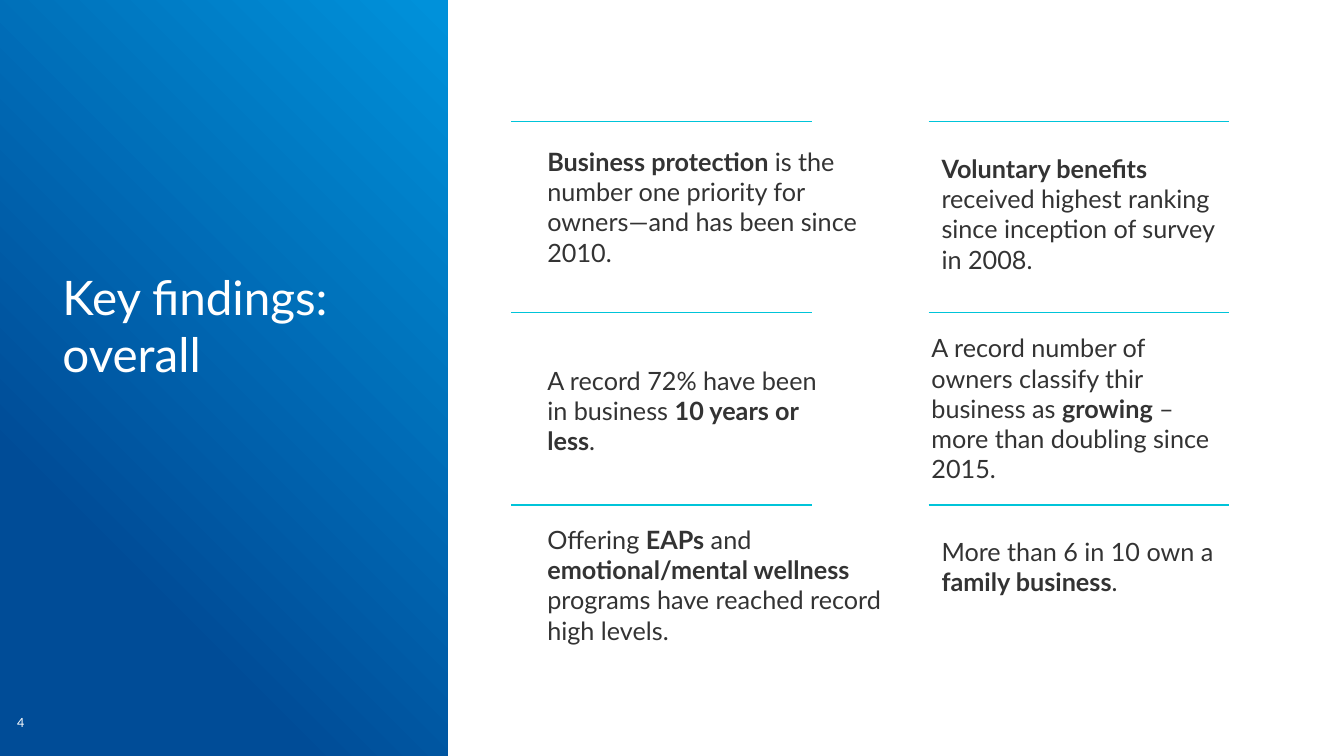
from pptx import Presentation
from pptx.dml.color import RGBColor
from pptx.enum.shapes import MSO_CONNECTOR, MSO_SHAPE
from pptx.enum.text import MSO_ANCHOR
from pptx.oxml.ns import qn
from pptx.util import Pt
from lxml import etree

EMU_PER_PX = 9144  # 100 px to the inch
RECTANGLE = MSO_SHAPE.RECTANGLE
STRAIGHT = MSO_CONNECTOR.STRAIGHT
TOP, BOTTOM = MSO_ANCHOR.TOP, MSO_ANCHOR.BOTTOM

FONT = "Lato"
WHITE, DARK_GREY, TEAL = "FFFFFF", "333333", "00C4D9"
NAVY, SKY = "004C97", "0091DA"

RULE_COLUMNS = (507, 921)
RULE_ROWS = (121, 310, 501)
RULE_WIDTH = 298

# Left, top, width, height and wording; ** switches bold on and off
FINDINGS = [
    (533, 140, 336, 131, "**Business protection **is the number one priority "
                         "for owners—and has been since 2010."),
    (533, 357, 301, 101, "A record 72% have been in business "
                         "**10 years or less**."),
    (533, 515, 352, 131, "Offering **EAPs** and **emotional/mental wellness **"
                         "programs have reached record high levels."),
    (924, 147, 310, 131, "**Voluntary benefits **received highest ranking "
                         "since inception of survey in 2008."),
    (914, 325, 310, 162, "A record number of owners classify thir business as "
                         "**growing **– more than doubling since 2015."),
    (924, 527, 310, 71, "More than 6 in 10 own a **family business**."),
]


def px(*lengths):
    return [length * EMU_PER_PX for length in lengths]


def rgb(hex_code):
    return RGBColor.from_string(hex_code)


def add_text(slide, box, text, size=18, color=DARK_GREY, anchor=TOP,
             inset=(10, 5)):
    frame = slide.shapes.add_textbox(*px(*box)).text_frame
    frame.word_wrap = True
    frame.vertical_anchor = anchor
    side, end = px(*inset)
    frame.margin_left = frame.margin_right = side
    frame.margin_top = frame.margin_bottom = end
    for index, part in enumerate(text.split("**")):
        if part:
            run = frame.paragraphs[0].add_run()
            run.text = part
            run.font.name = FONT
            run.font.size = Pt(size)
            run.font.bold = index % 2 == 1
            run.font.color.rgb = rgb(color)


def add_panel(slide, box, stops, angle):
    panel = slide.shapes.add_shape(RECTANGLE, *px(*box))
    panel.shadow.inherit = False
    panel.line.fill.background()
    panel.fill.gradient()
    panel.fill.gradient_angle = angle
    for stop, (position, color) in zip(panel.fill.gradient_stops, stops):
        stop.position = position
        stop.color.rgb = rgb(color)


def add_rule(slide, left, top, width):
    rule = slide.shapes.add_connector(
        STRAIGHT, *px(left, top, left + width, top))
    rule.line.color.rgb = rgb(TEAL)
    rule.line.width = Pt(0.75)
    etree.SubElement(rule._element.spPr, qn("a:effectLst"))


def main():
    deck = Presentation()
    deck.slide_width, deck.slide_height = px(1333, 750)
    slide = deck.slides.add_slide(deck.slide_layouts[6])

    # Title panel and page number
    add_panel(slide, (0, 0, 444, 750), [(0.25, NAVY), (0.99, SKY)], 45)
    add_text(slide, (62, 266, 347, 172), "Key findings: overall",
             size=34, color=WHITE, inset=(0, 0))
    add_text(slide, (17, 683, 46, 41), "4",
             size=9, color=WHITE, anchor=BOTTOM, inset=(0, 0))

    # Rules above each finding
    for top in RULE_ROWS:
        for left in RULE_COLUMNS:
            add_rule(slide, left, top, RULE_WIDTH)

    # Findings
    for *box, wording in FINDINGS:
        add_text(slide, box, wording)

    deck.save("out.pptx")


if __name__ == "__main__":
    main()
